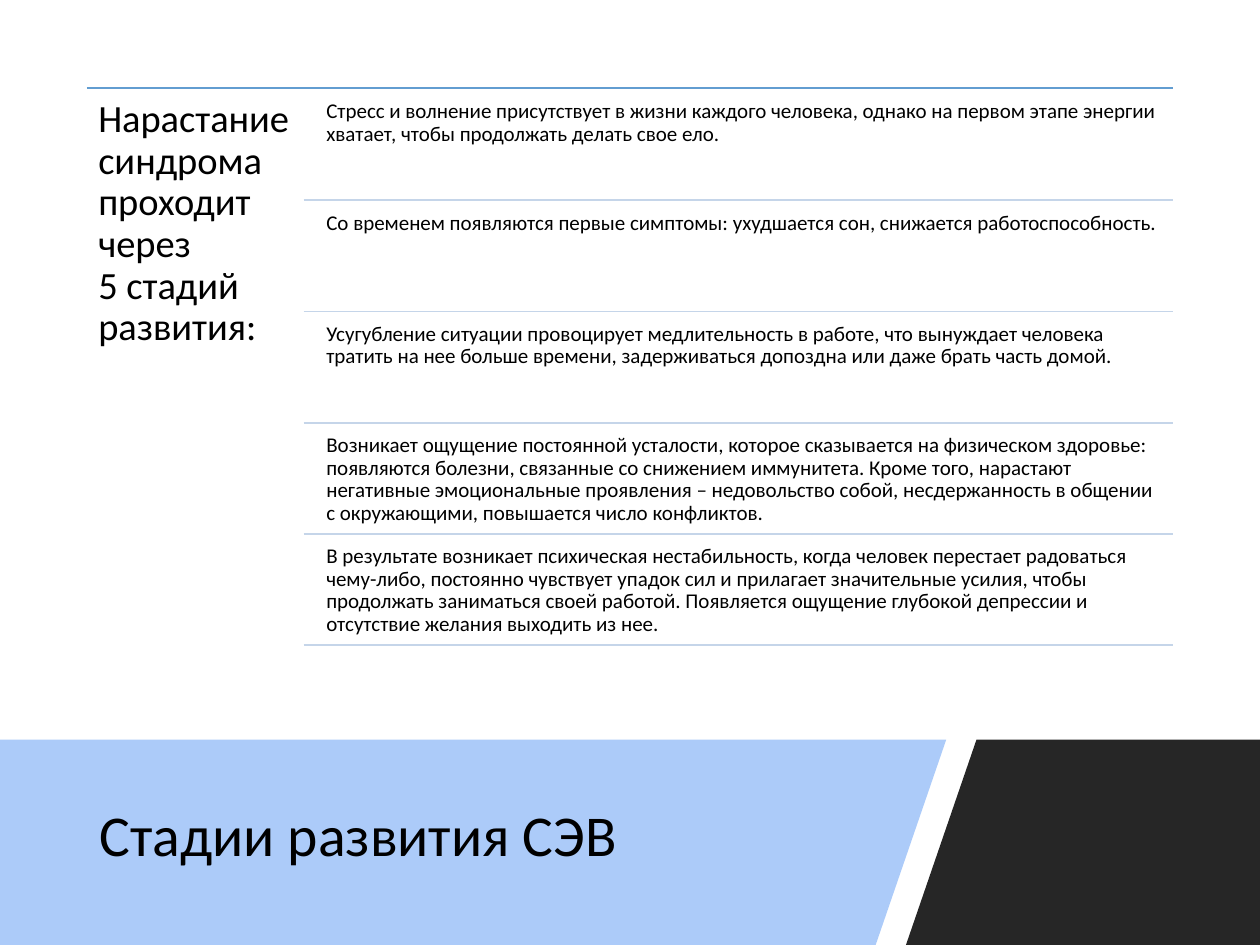
from lxml import etree
from pptx import Presentation
from pptx.dml.color import RGBColor
from pptx.enum.shapes import MSO_CONNECTOR
from pptx.enum.text import MSO_ANCHOR, MSO_AUTO_SIZE, PP_ALIGN
from pptx.oxml.ns import qn
from pptx.util import Inches, Pt

STRAIGHT = MSO_CONNECTOR.STRAIGHT
TOP, MIDDLE = MSO_ANCHOR.TOP, MSO_ANCHOR.MIDDLE
LEFT = PP_ALIGN.LEFT
NO_FIT = MSO_AUTO_SIZE.NONE

TITLE = "Стадии развития СЭВ"
INTRO = ["Нарастание синдрома проходит через", "5 стадий развития:"]
STAGES = [
    "Стресс и волнение присутствует в жизни каждого человека, однако на первом этапе "
    "энергии хватает, чтобы продолжать делать свое ело.",
    "Со временем появляются первые симптомы: ухудшается сон, снижается работоспособность.",
    "Усугубление ситуации провоцирует медлительность в работе, что вынуждает человека "
    "тратить на нее больше времени, задерживаться допоздна или даже брать часть домой.",
    "Возникает ощущение постоянной усталости, которое сказывается на физическом здоровье: "
    "появляются болезни, связанные со снижением иммунитета. Кроме того, нарастают "
    "негативные эмоциональные проявления – недовольство собой, несдержанность в общении "
    "с окружающими, повышается число конфликтов.",
    "В результате возникает психическая нестабильность, когда человек перестает радоваться "
    "чему-либо, постоянно чувствует упадок сил и прилагает значительные усилия, чтобы "
    "продолжать заниматься своей работой. Появляется ощущение глубокой депрессии и "
    "отсутствие желания выходить из нее.",
]

FONT, INK = "Calibri", "000000"
DARK, BLUE = "262626", "ACCBF9"
TOP_RULE, STAGE_RULE = "629DD1", "C5D5E9"

# Inches
WIDTH, HEIGHT = 10, 7.5
BAND_TOP = 5.87
MARGIN = 0.69
RIGHT = WIDTH - MARGIN
LIST_TOP, LIST_BOTTOM = 0.7, 5.12
RULE_LEFT, STAGE_LEFT = 2.41, 2.54
FIRST_RULE = 1.59
STAGE_HEIGHT = 0.84
ROW_PITCH = (LIST_BOTTOM - FIRST_RULE) / (len(STAGES) - 1)

BANDS = [
    (DARK, [(7.75, BAND_TOP), (WIDTH, BAND_TOP), (WIDTH, HEIGHT), (7.19, HEIGHT)]),
    (BLUE, [(0, BAND_TOP), (7.51, BAND_TOP), (6.95, HEIGHT), (0, HEIGHT)]),
]


def rgb(value):
    return RGBColor.from_string(value)


def add_band(shapes, color, corners):
    points = [(Inches(x), Inches(y)) for x, y in corners]
    builder = shapes.build_freeform(*points[0], scale=1.0)
    builder.add_line_segments(points[1:], close=True)
    band = builder.convert_to_shape()
    band.shadow.inherit = False
    band.fill.solid()
    band.fill.fore_color.rgb = rgb(color)
    band.line.fill.background()


def add_rule(shapes, left, y, color):
    rule = shapes.add_connector(STRAIGHT, Inches(left), Inches(y), Inches(RIGHT), Inches(y))
    rule.line.color.rgb = rgb(color)
    rule.line.width = Pt(1)
    etree.SubElement(rule._element.spPr, qn("a:effectLst"))


def write(frame, paragraphs, size, anchor=TOP, inset=None, space_after=0):
    frame.word_wrap = True
    frame.auto_size = NO_FIT
    frame.vertical_anchor = anchor
    if inset is not None:
        frame.margin_left = frame.margin_right = Inches(inset)
        frame.margin_top = frame.margin_bottom = Inches(inset)
    for i, text in enumerate(paragraphs):
        paragraph = frame.add_paragraph() if i else frame.paragraphs[0]
        paragraph.alignment = LEFT
        paragraph.line_spacing = 0.9
        paragraph.space_after = Pt(space_after)
        run = paragraph.add_run()
        run.text = text
        run.font.name = FONT
        run.font.size = Pt(size)
        run.font.color.rgb = rgb(INK)


def add_text(shapes, left, top, width, height, *args, **options):
    box = shapes.add_textbox(Inches(left), Inches(top), Inches(width), Inches(height))
    write(box.text_frame, *args, **options)


def main():
    deck = Presentation()
    deck.slide_width, deck.slide_height = Inches(WIDTH), Inches(HEIGHT)
    slide = deck.slides.add_slide(deck.slide_layouts[5])

    for color, corners in BANDS:
        add_band(slide.shapes, color, corners)

    title = slide.shapes.title
    title.left, title.top = Inches(MARGIN), Inches(6.05)
    title.width, title.height = Inches(6.33), Inches(1.2)
    write(title.text_frame, [TITLE], 33, anchor=MIDDLE)
    slide.shapes._spTree.append(title._element)  # in front of the bands

    stage_list = slide.shapes.add_group_shape().shapes
    add_rule(stage_list, MARGIN, LIST_TOP, TOP_RULE)
    add_text(stage_list, MARGIN, LIST_TOP, 1.73, 4.46, INTRO, 22, inset=0.09)
    for row, stage in enumerate(STAGES):
        rule_y = FIRST_RULE + row * ROW_PITCH
        add_text(stage_list, STAGE_LEFT, rule_y - STAGE_HEIGHT, RIGHT - STAGE_LEFT,
                 STAGE_HEIGHT, [stage], 12, inset=0.05, space_after=4.2)
        add_rule(stage_list, RULE_LEFT, rule_y, STAGE_RULE)

    deck.save("out.pptx")


if __name__ == "__main__":
    main()
